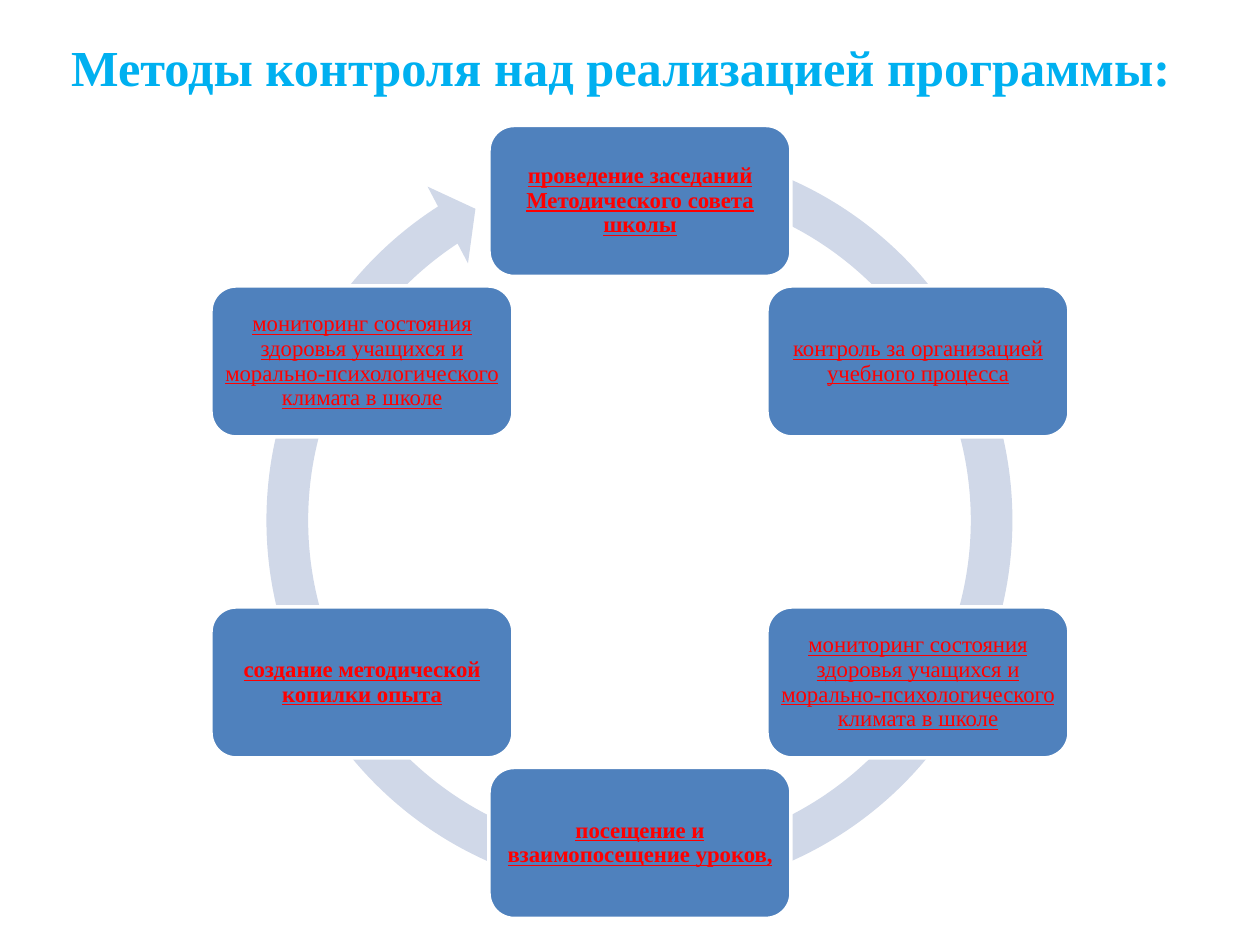
"""Build a slide with a cycle of six methods for monitoring a programme."""
from math import cos, radians, sin

from pptx import Presentation
from pptx.dml.color import RGBColor
from pptx.enum.shapes import MSO_SHAPE
from pptx.enum.text import MSO_ANCHOR, PP_ALIGN
from pptx.util import Inches, Pt

PX = Inches(1) / 126
FONT = "Times New Roman"
CENTER_X, CENTER_Y, RADIUS = 640, 522, 321
BOX_W, BOX_H = 302, 151
HEALTH = "мониторинг состояния здоровья учащихся и морально-психологического климата в школе"
METHODS = [
    ("проведение заседаний Методического совета школы", True),
    ("контроль за организацией учебного процесса", False),
    (HEALTH, False),
    ("посещение и взаимопосещение уроков,", True),
    ("создание методической копилки опыта", True),
    (HEALTH, False),
]


def px(*lengths):
    return [round(length * PX) for length in lengths]


def color(hex_string):
    return RGBColor.from_string(hex_string)


def write(sp, text, size, hex_color, bold, underline=False, inset=0, spacing=1.0):
    tf = sp.text_frame
    tf.word_wrap = True
    tf.vertical_anchor = MSO_ANCHOR.MIDDLE
    margin, = px(inset)
    tf.margin_left = tf.margin_right = tf.margin_top = tf.margin_bottom = margin
    p = tf.paragraphs[0]
    p.alignment = PP_ALIGN.CENTER
    p.line_spacing = spacing
    r = p.add_run()
    r.text = text
    r.font.name = FONT
    r.font.size = Pt(size)
    r.font.bold = bold
    r.font.underline = underline
    r.font.color.rgb = color(hex_color)


def add_filled(s, kind, x, y, w, h, fill):
    sp = s.shapes.add_shape(kind, *px(x, y, w, h))
    sp.shadow.inherit = False
    sp.fill.solid()
    sp.fill.fore_color.rgb = color(fill)
    sp.line.fill.background()
    return sp


def add_title(s, text):
    sp = s.shapes.add_textbox(*px(54, 28, 1134, 77))
    write(sp, text, 28.8, "00B0F0", True)


def add_ring(s):
    sp = add_filled(s, MSO_SHAPE.CIRCULAR_ARROW, 244, 125, 791, 791, "D0D8E8")
    thickness, head_angle, end, start, head_width = 5.27, 5.21, 237.03, 285.52, 5.48
    values = (thickness / 100, head_angle * 0.6, end * 0.6, start * 0.6, head_width / 100)
    for i, value in enumerate(values):
        sp.adjustments[i] = value


def add_method(s, index, text, bold):
    angle = radians(360 / len(METHODS) * index)
    x = CENTER_X + RADIUS * sin(angle) - BOX_W / 2
    y = CENTER_Y - RADIUS * cos(angle) - BOX_H / 2
    sp = add_filled(s, MSO_SHAPE.ROUNDED_RECTANGLE, x, y, BOX_W, BOX_H, "4F81BD")
    sp.line.color.rgb = color("FFFFFF")
    sp.line.width = Pt(2)
    write(sp, text, 13, "FF0000", bold, underline=True, inset=6, spacing=0.9)


def main():
    prs = Presentation()
    prs.slide_width, prs.slide_height = px(1260, 945)
    s = prs.slides.add_slide(prs.slide_layouts[6])
    add_title(s, "Методы контроля над реализацией программы:")
    add_ring(s)
    for index, (text, bold) in enumerate(METHODS):
        add_method(s, index, text, bold)
    prs.save("out.pptx")


if __name__ == "__main__":
    main()
